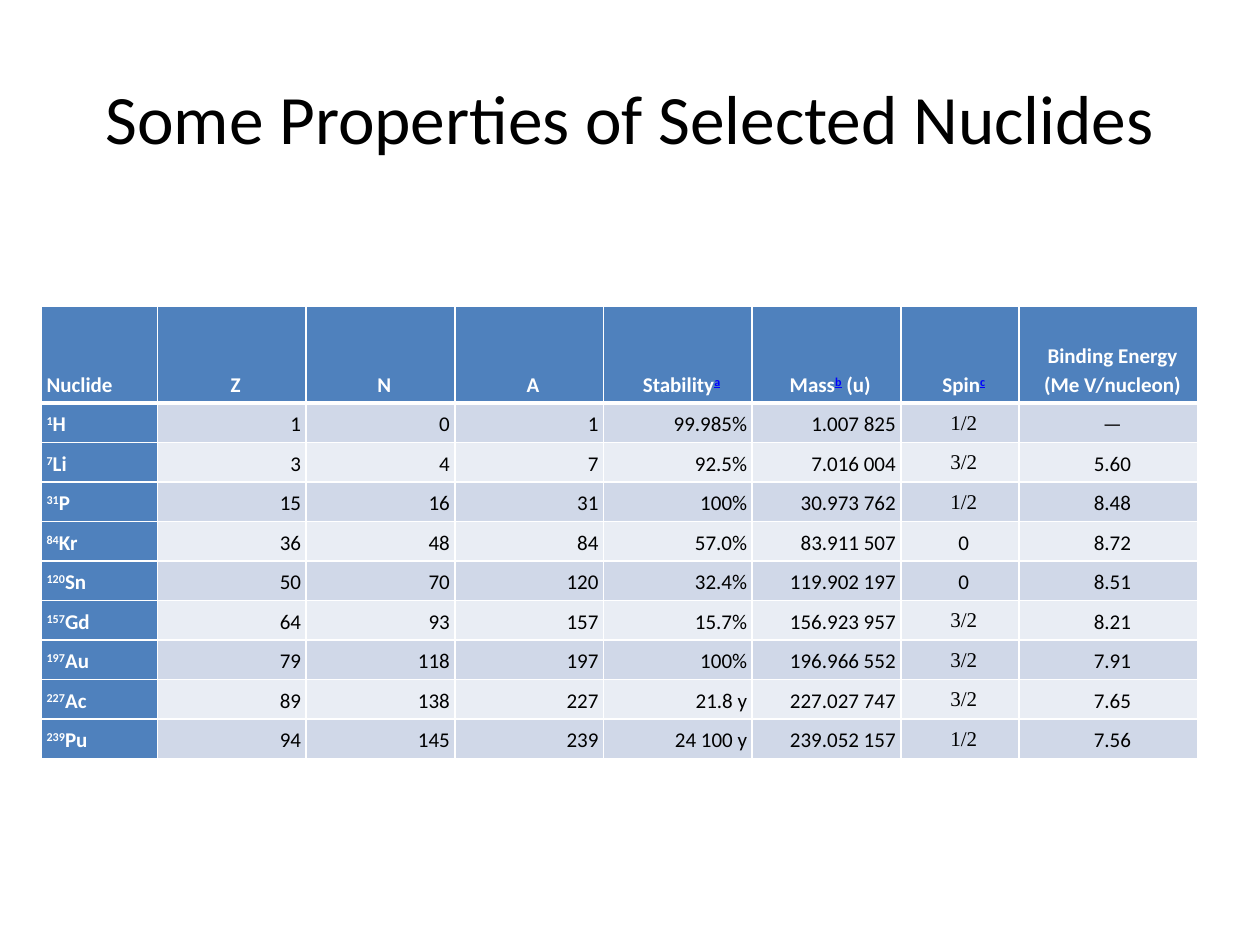
"""Build a slide with a table of properties of selected nuclides."""
from lxml import etree
from pptx import Presentation
from pptx.dml.color import RGBColor
from pptx.enum.text import MSO_ANCHOR, PP_ALIGN
from pptx.oxml.ns import qn
from pptx.util import Inches, Pt

LEFT, CENTER, RIGHT = PP_ALIGN.LEFT, PP_ALIGN.CENTER, PP_ALIGN.RIGHT
TOP, MIDDLE, BOTTOM = MSO_ANCHOR.TOP, MSO_ANCHOR.MIDDLE, MSO_ANCHOR.BOTTOM

BLACK = RGBColor(0x00, 0x00, 0x00)
WHITE = RGBColor(0xFF, 0xFF, 0xFF)
HEADER_BLUE = RGBColor(0x4F, 0x81, 0xBD)
LINK_BLUE = RGBColor(0x00, 0x00, 0xFF)
BANDS = (RGBColor(0xD0, 0xD8, 0xE8), RGBColor(0xE9, 0xED, 0xF4))

COLUMN_WIDTHS = [0.92] + [1.18] * 5 + [0.94, 1.42]
HEADER_HEIGHT, ROW_HEIGHT = 0.77, 0.31
BODY_ALIGNMENTS = [LEFT] + [RIGHT] * 5 + [CENTER] * 2

# Text between bars is superscript.
ROWS = [
    ("Nuclide", "Z", "N", "A", "Stability|a|", "Mass|b| (u)", "Spin|c|",
     "Binding Energy (Me V/nucleon)"),
    ("|1|H", "1", "0", "1", "99.985%", "1.007 825", "1/2", "—"),
    ("|7|Li", "3", "4", "7", "92.5%", "7.016 004", "3/2", "5.60"),
    ("|31|P", "15", "16", "31", "100%", "30.973 762", "1/2", "8.48"),
    ("|84|Kr", "36", "48", "84", "57.0%", "83.911 507", "0", "8.72"),
    ("|120|Sn", "50", "70", "120", "32.4%", "119.902 197", "0", "8.51"),
    ("|157|Gd", "64", "93", "157", "15.7%", "156.923 957", "3/2", "8.21"),
    ("|197|Au", "79", "118", "197", "100%", "196.966 552", "3/2", "7.91"),
    ("|227|Ac", "89", "138", "227", "21.8 y", "227.027 747", "3/2", "7.65"),
    ("|239|Pu", "94", "145", "239", "24 100 y", "239.052 157", "1/2", "7.56"),
]


def write_text(text_frame, text, size=12, font="Calibri", color=BLACK, bold=False,
               align=LEFT, line_spacing=None, linked=False):
    paragraph = text_frame.paragraphs[0]
    paragraph.alignment = align
    paragraph.line_spacing = line_spacing
    for index, piece in enumerate(text.split("|")):
        if not piece:
            continue
        superscript = index % 2 == 1
        run = paragraph.add_run()
        run.text = piece
        run.font.size = Pt(size)
        run.font.name = font
        run.font.bold = bold
        run.font.color.rgb = LINK_BLUE if superscript and linked else color
        if superscript:
            run.font.underline = linked
            run._r.get_or_add_rPr().set("baseline", "30000")


def set_borders(cell, bottom_width, top_width):
    properties = cell._tc.get_or_add_tcPr()
    widths = {"a:lnL": 1, "a:lnR": 1, "a:lnT": top_width, "a:lnB": bottom_width}
    for position, (tag, width) in enumerate(widths.items()):
        line = etree.Element(qn(tag), w=str(Pt(width)))
        fill = etree.SubElement(line, qn("a:solidFill"))
        etree.SubElement(fill, qn("a:srgbClr"), val=str(WHITE))
        properties.insert(position, line)


presentation = Presentation()
presentation.slide_width = Inches(10)
presentation.slide_height = Inches(7.5)
slide = presentation.slides.add_slide(presentation.slide_layouts[5])

title = slide.shapes.title
title.left, title.top = Inches(0.5), Inches(0.3)
title.width, title.height = Inches(9), Inches(1.25)
title.text_frame.vertical_anchor = MIDDLE
write_text(title.text_frame, "Some Properties of Selected Nuclides", size=39.6, align=CENTER)

table_height = HEADER_HEIGHT + ROW_HEIGHT * (len(ROWS) - 1)
table = slide.shapes.add_table(
    len(ROWS), len(COLUMN_WIDTHS), Inches(0.33), Inches(2.43),
    Inches(sum(COLUMN_WIDTHS)), Inches(table_height)).table
table.first_col = True
for column, width in zip(table.columns, COLUMN_WIDTHS):
    column.width = Inches(width)

for row_index, values in enumerate(ROWS):
    is_header = row_index == 0
    table.rows[row_index].height = Inches(HEADER_HEIGHT if is_header else ROW_HEIGHT)
    for column_index, value in enumerate(values):
        is_first = column_index == 0
        is_heading = is_header or is_first
        cell = table.cell(row_index, column_index)
        cell.margin_left = Inches(0.04 if is_first else 0.1)
        cell.margin_top = cell.margin_right = cell.margin_bottom = Inches(0.04)
        cell.vertical_anchor = BOTTOM if is_header else TOP
        cell.fill.solid()
        cell.fill.fore_color.rgb = HEADER_BLUE if is_heading else BANDS[(row_index - 1) % 2]
        set_borders(cell, bottom_width=3 if is_header else 1,
                    top_width=3 if row_index == 1 else 1)
        is_fraction = not is_header and "/" in value
        write_text(
            cell.text_frame, value,
            font="Times New Roman" if is_fraction else "Calibri",
            color=WHITE if is_heading else BLACK,
            bold=is_heading,
            align=CENTER if is_header and not is_first else BODY_ALIGNMENTS[column_index],
            line_spacing=1.15, linked=is_header)

presentation.save("out.pptx")
